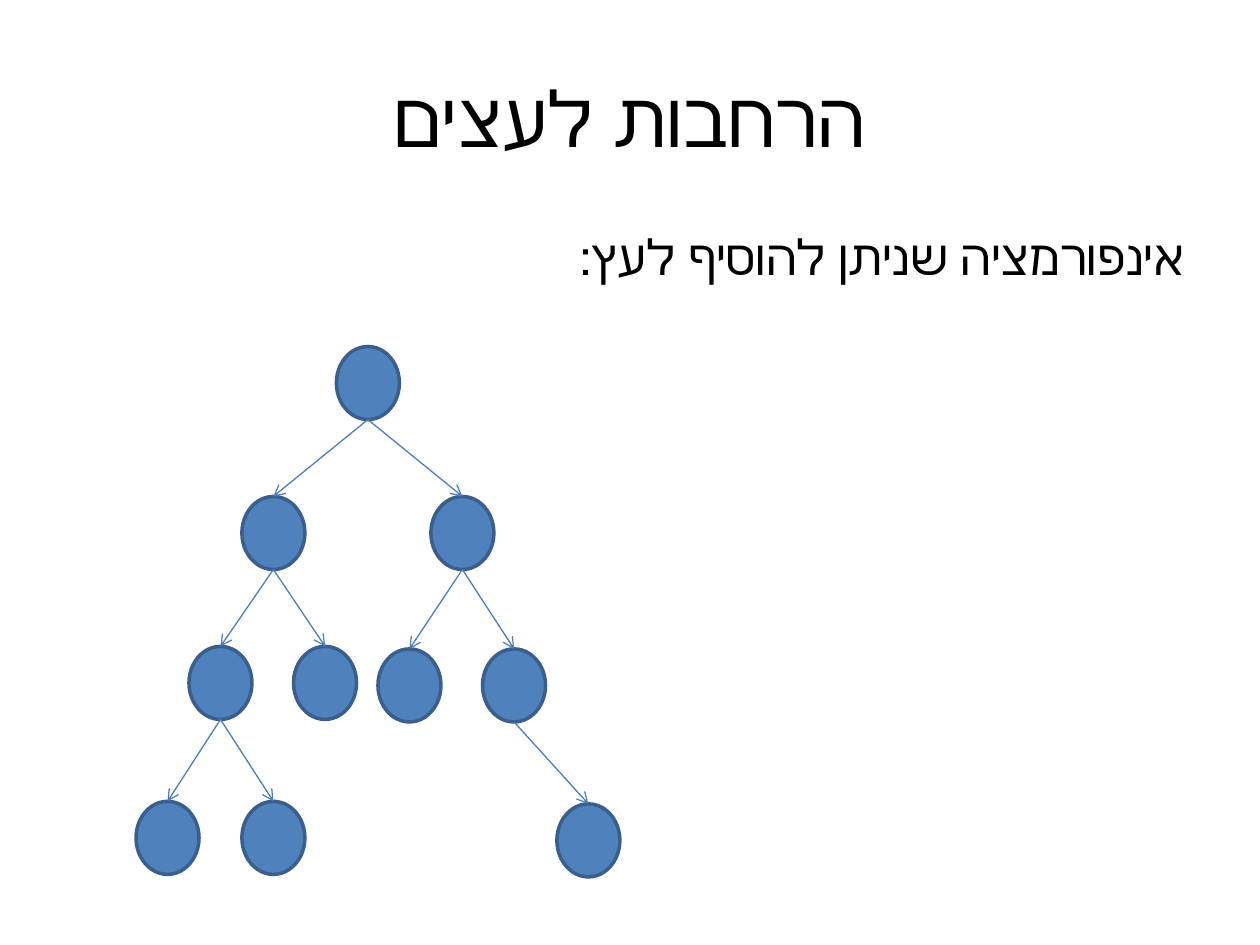
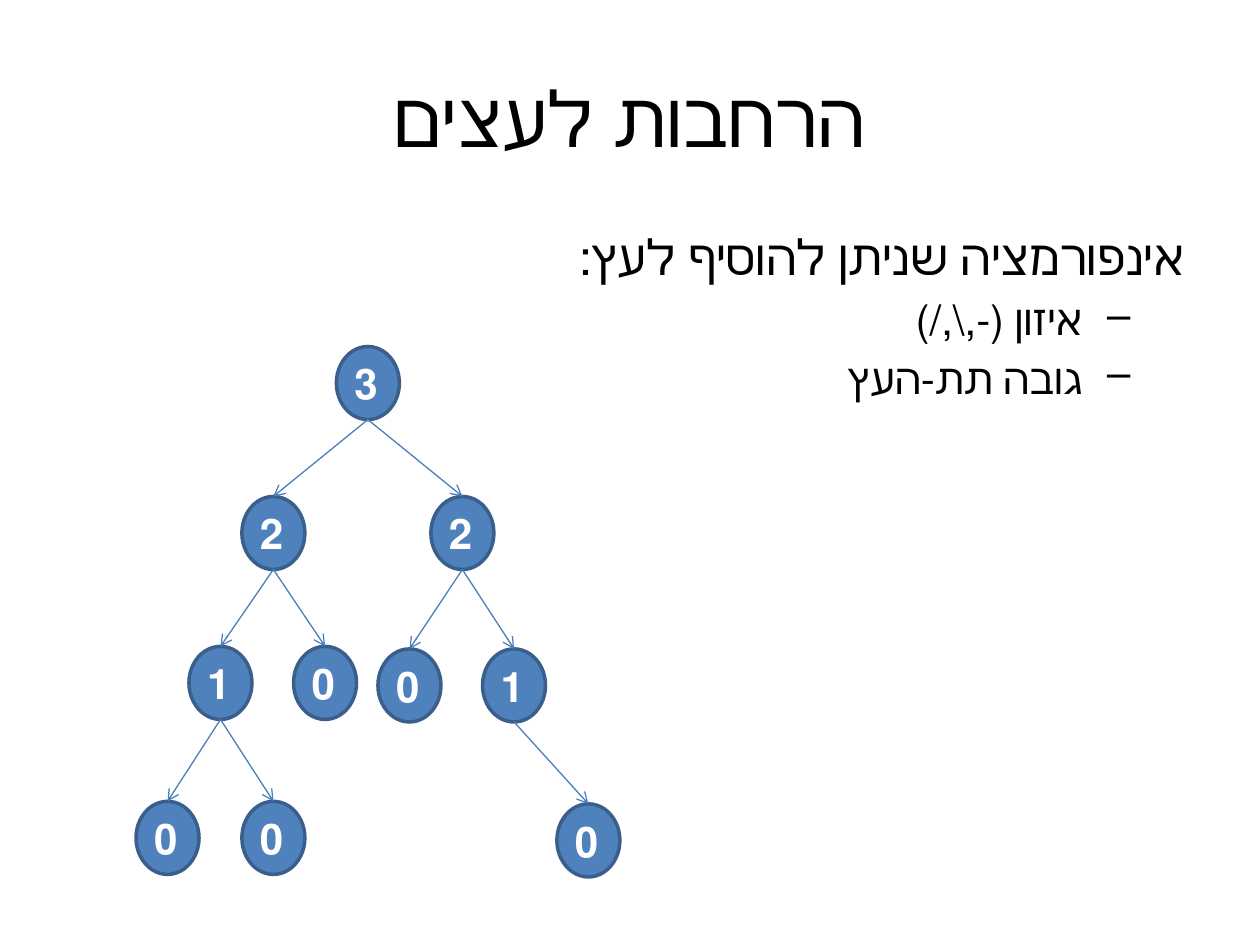
import pptx
import pptx.dml.color
import pptx.enum.lang
import pptx.enum.shapes
import pptx.enum.text
import pptx.oxml.ns
import pptx.util
from dataclasses import dataclass
from lxml import etree

Inches = pptx.util.Inches
Align = pptx.enum.text.PP_ALIGN
Anchor = pptx.enum.text.MSO_ANCHOR


@dataclass(frozen=True)
class Theme:
    font: str = "Calibri"
    text: str = "000000"
    node_text: str = "FFFFFF"
    node_fill: str = "4F81BD"
    node_line: str = "3A5F8C"
    edge: str = "4B7EBC"
    title_size: int = 44
    heading_size: int = 28
    item_size: int = 24
    node_line_width: float = 2
    edge_width: float = 0.75


THEME = Theme()
TITLE = "הרחבות לעצים"
HEADING = "אינפורמציה שניתן להוסיף לעץ:"
ITEMS = ["איזון (-,\\,/)", "גובה תת-העץ"]
NODE_SIZE = (0.5, 0.58)

# Each tree node: left, top, parent
TREE = {
    "root": (2.67, 2.75, None),
    "left": (1.92, 3.94, "root"),
    "right": (3.42, 3.94, "root"),
    "left-left": (1.5, 5.13, "left"),
    "left-right": (2.33, 5.13, "left"),
    "right-left": (3, 5.15, "right"),
    "right-right": (3.83, 5.15, "right"),
    "first leaf": (1.08, 6.36, "left-left"),
    "second leaf": (1.92, 6.36, "left-left"),
    "last leaf": (4.42, 6.38, "right-right"),
}


def subtree_height(name):
    children = [child for child, (_, _, parent) in TREE.items() if parent == name]
    return 1 + max(map(subtree_height, children)) if children else 0


def set_format(target, values):
    for name, value in values.items():
        setattr(target, name, value)


def rgb(value):
    return pptx.dml.color.RGBColor.from_string(value)


def add_xml(parent, tag, **attributes):
    return etree.SubElement(parent, pptx.oxml.ns.qn(tag), attributes)


def write_text(paragraph, text, size, color=THEME.text, alignment=Align.CENTER, bold=False):
    """Write one right-to-left run."""
    run = paragraph.add_run()
    run.text = text
    set_format(run.font, {
        "name": THEME.font,
        "size": pptx.util.Pt(size),
        "bold": bold,
        "language_id": pptx.enum.lang.MSO_LANGUAGE_ID.HEBREW,
    })
    run.font.color.rgb = rgb(color)
    paragraph.alignment = alignment
    paragraph._p.get_or_add_pPr().set("rtl", "1")


def add_title(slide):
    title = slide.shapes.title
    set_format(title, {"left": Inches(0.5), "top": Inches(0.3),
                       "width": Inches(9), "height": Inches(1.25)})
    title.text_frame.vertical_anchor = Anchor.MIDDLE
    write_text(title.text_frame.paragraphs[0], TITLE, THEME.title_size)


def add_body(slide, items):
    box = slide.shapes.add_textbox(Inches(0.5), Inches(1.75), Inches(9), Inches(4.95))
    frame = box.text_frame
    set_format(frame, {"word_wrap": True, "vertical_anchor": Anchor.TOP})
    lines = [(HEADING, THEME.heading_size, 0)] + [(item, THEME.item_size, 1) for item in items]
    for index, (text, size, level) in enumerate(lines):
        paragraph = frame.add_paragraph() if index else frame.paragraphs[0]
        write_text(paragraph, text, size, alignment=Align.RIGHT)
        set_format(paragraph, {"level": level, "space_before": pptx.util.Pt(size * 0.2)})
        if level:
            properties = paragraph._p.get_or_add_pPr()
            properties.set("marL", str(Inches(0.81)))
            properties.set("indent", str(Inches(-0.38)))
            add_xml(properties, "a:buChar", char="–")


def add_node(slide, left, top, label):
    node = slide.shapes.add_shape(
        pptx.enum.shapes.MSO_SHAPE.OVAL, Inches(left), Inches(top), *map(Inches, NODE_SIZE))
    node.shadow.inherit = False
    node.fill.solid()
    node.fill.fore_color.rgb = rgb(THEME.node_fill)
    node.line.color.rgb = rgb(THEME.node_line)
    node.line.width = pptx.util.Pt(THEME.node_line_width)
    if label:
        node.text_frame.vertical_anchor = Anchor.MIDDLE
        write_text(node.text_frame.paragraphs[0], label, THEME.item_size,
                   THEME.node_text, bold=True)
    return node


def add_edge(slide, parent, child):
    edge = slide.shapes.add_connector(
        pptx.enum.shapes.MSO_CONNECTOR.STRAIGHT,
        parent.left + parent.width // 2, parent.top + parent.height,
        child.left + child.width // 2, child.top)
    edge.end_connect(child, 0)
    edge.line.color.rgb = rgb(THEME.edge)
    edge.line.width = pptx.util.Pt(THEME.edge_width)
    add_xml(edge.line._get_or_add_ln(), "a:tailEnd", type="arrow")
    add_xml(edge._element.spPr, "a:effectLst")


def add_tree(slide, show_heights):
    nodes = {}
    for name, (left, top, parent) in TREE.items():
        label = str(subtree_height(name)) if show_heights else ""
        nodes[name] = add_node(slide, left, top, label)
        if parent:
            add_edge(slide, nodes[parent], nodes[name])


def add_tree_slide(presentation, items, show_heights):
    slide = presentation.slides.add_slide(presentation.slide_layouts[5])
    add_title(slide)
    add_body(slide, items)
    add_tree(slide, show_heights)


def main():
    presentation = pptx.Presentation()
    set_format(presentation, {"slide_width": Inches(10), "slide_height": Inches(7.5)})
    # Plain tree, then the tree with subtree heights
    add_tree_slide(presentation, [], show_heights=False)
    add_tree_slide(presentation, ITEMS, show_heights=True)
    presentation.save("out.pptx")


if __name__ == "__main__":
    main()
